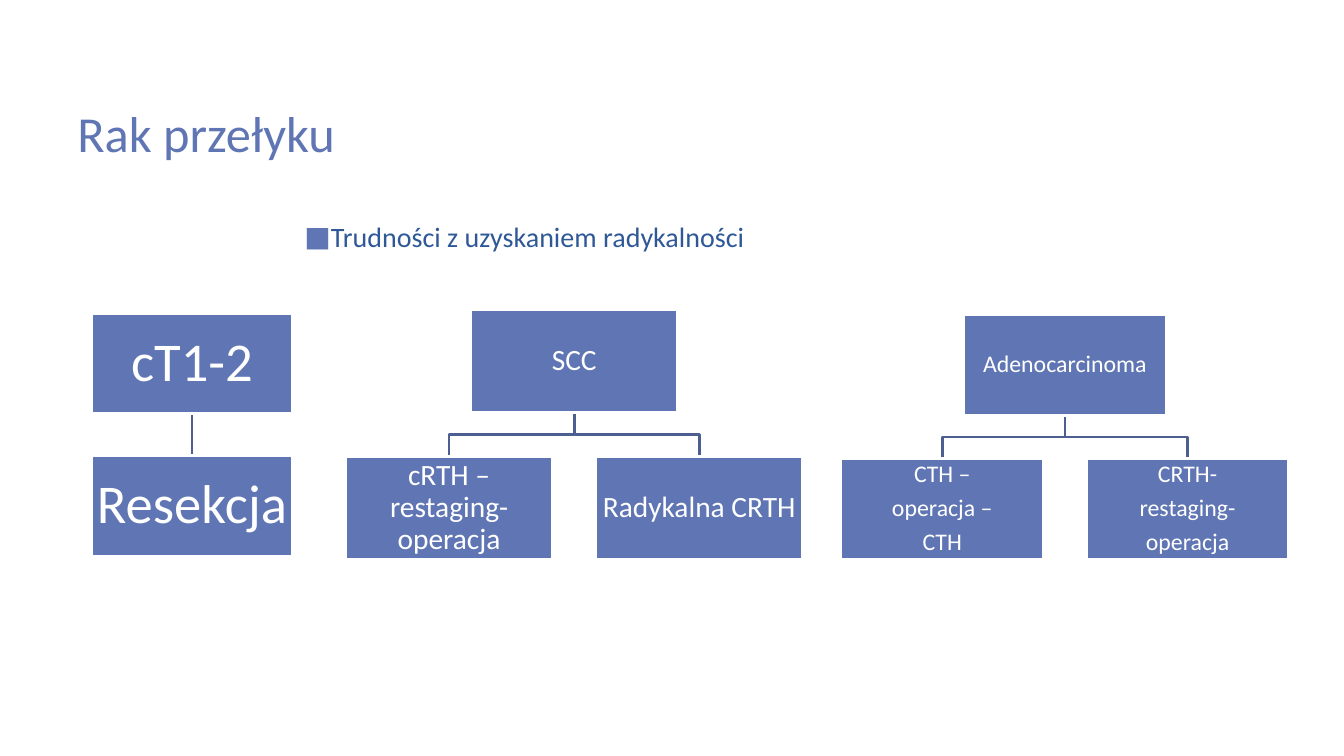
from lxml.etree import SubElement
from pptx import Presentation
from pptx.dml.color import RGBColor
from pptx.enum.shapes import MSO_CONNECTOR, MSO_SHAPE
from pptx.enum.text import MSO_ANCHOR, MSO_AUTO_SIZE, PP_ALIGN
from pptx.oxml.ns import qn
from pptx.util import Inches, Pt

WIDE, HIGH = Inches(13.33), Inches(7.5)
BLUE, DARK, NAVY, WHITE = "6076B4", "4D5E90", "2F5897", "FFFFFF"
GAP = 0.21  # space between boxes, as a share of box width


def across(pct):
    return round(WIDE * pct / 100)


def down(pct):
    return round(HIGH * pct / 100)


def paint(color, tint):
    color.rgb = RGBColor.from_string(tint)


def write(para, text, size, tint):
    run = para.add_run()
    run.text = text
    run.font.name = "Calibri"
    run.font.size = Pt(size)
    paint(run.font.color, tint)


def fill_slot(slot, area, text, size, tint, anchor):
    """Move a placeholder to its area and write one line in it."""
    left, top, width, height = area
    slot.left, slot.top = across(left), down(top)
    slot.width, slot.height = across(width), down(height)
    frame = slot.text_frame
    frame.auto_size = MSO_AUTO_SIZE.NONE
    frame.vertical_anchor = anchor
    para = frame.paragraphs[0]
    para.alignment = PP_ALIGN.LEFT
    para.space_before = Pt(0)
    write(para, text, size, tint)
    return para


def add_bullet(para):
    props = para._p.get_or_add_pPr()
    props.set("marL", str(Inches(0.25)))
    props.set("indent", str(-Inches(0.25)))
    tint = SubElement(props, qn("a:buClr"))
    SubElement(tint, qn("a:srgbClr"), val=BLUE)
    SubElement(props, qn("a:buFont"), typeface="Calibri")
    SubElement(props, qn("a:buChar"), char="■")


def add_box(slide, mid, top, width, lines, size, inset):
    """Add a box twice as wide as high, centred on mid."""
    box = slide.shapes.add_shape(
        MSO_SHAPE.RECTANGLE, mid - width // 2, top, width, width // 2)
    box.shadow.inherit = False
    box.fill.solid()
    paint(box.fill.fore_color, BLUE)
    paint(box.line.color, WHITE)
    box.line.width = Pt(2)
    frame = box.text_frame
    frame.word_wrap = True
    frame.vertical_anchor = MSO_ANCHOR.MIDDLE
    frame.margin_left = frame.margin_right = Inches(inset)
    frame.margin_top = frame.margin_bottom = Inches(inset)
    for row, text in enumerate(lines):
        para = frame.add_paragraph() if row else frame.paragraphs[0]
        para.alignment = PP_ALIGN.CENTER
        para.line_spacing = 0.9
        para.space_after = Pt(round(size * 0.35))
        write(para, text, size, WHITE)
    return box


def add_link(slide, root, kid):
    """Join two boxes, straight or with an elbow, behind the boxes."""
    start, end = root.left + root.width // 2, kid.left + kid.width // 2
    base = root.top + root.height
    if start == end:
        link = slide.shapes.add_connector(
            MSO_CONNECTOR.STRAIGHT, start, base, end, kid.top)
        link.begin_connect(root, 2)
        link.end_connect(kid, 0)
        SubElement(link.element.spPr, qn("a:effectLst"))
    else:
        bend = (base + kid.top) // 2
        pen = slide.shapes.build_freeform(start, base)
        pen.add_line_segments(
            [(start, bend), (end, bend), (end, kid.top)], close=False)
        link = pen.convert_to_shape()
        link.shadow.inherit = False
        link.fill.background()
    paint(link.line.color, DARK)
    link.line.width = Pt(2)
    root.element.addprevious(link.element)


def add_tree(slide, mid, top, width, size, inset, head, kids):
    mid, top, width = across(mid), down(top), across(width)
    root = add_box(slide, mid, top, width, [head], size, inset)
    low = top + round(width * (0.5 + GAP))
    step = round(width * (1 + GAP))
    for num, lines in enumerate(kids):
        shift = round(step * (num - (len(kids) - 1) / 2))
        kid = add_box(slide, mid + shift, low, width, lines, size, inset)
        add_link(slide, root, kid)


def main():
    deck = Presentation()
    deck.slide_width, deck.slide_height = WIDE, HIGH
    slide = deck.slides.add_slide(deck.slide_layouts[1])

    # Title and bullet
    title, body = slide.placeholders
    fill_slot(title, (5, 5.5, 71.2, 16.7), "Rak przełyku",
              36, BLUE, MSO_ANCHOR.BOTTOM)
    para = fill_slot(body, (21.9, 28.4, 71.2, 8.3),
                     "Trudności z uzyskaniem radykalności",
                     20, NAVY, MSO_ANCHOR.TOP)
    add_bullet(para)

    # Treatment trees
    add_tree(slide, 14.29, 41.47, 14.93, 39, 0.03, "cT1-2", [["Resekcja"]])
    add_tree(slide, 42.72, 40.93, 15.38, 21, 0.01, "SCC",
             [["cRTH – restaging-operacja"], ["Radykalna CRTH"]])
    add_tree(slide, 79.24, 41.6, 15.08, 17, 0.01, "Adenocarcinoma",
             [["CTH –", "operacja –", "CTH"],
              ["CRTH-", "restaging-", "operacja"]])

    deck.save("out.pptx")


if __name__ == "__main__":
    main()
